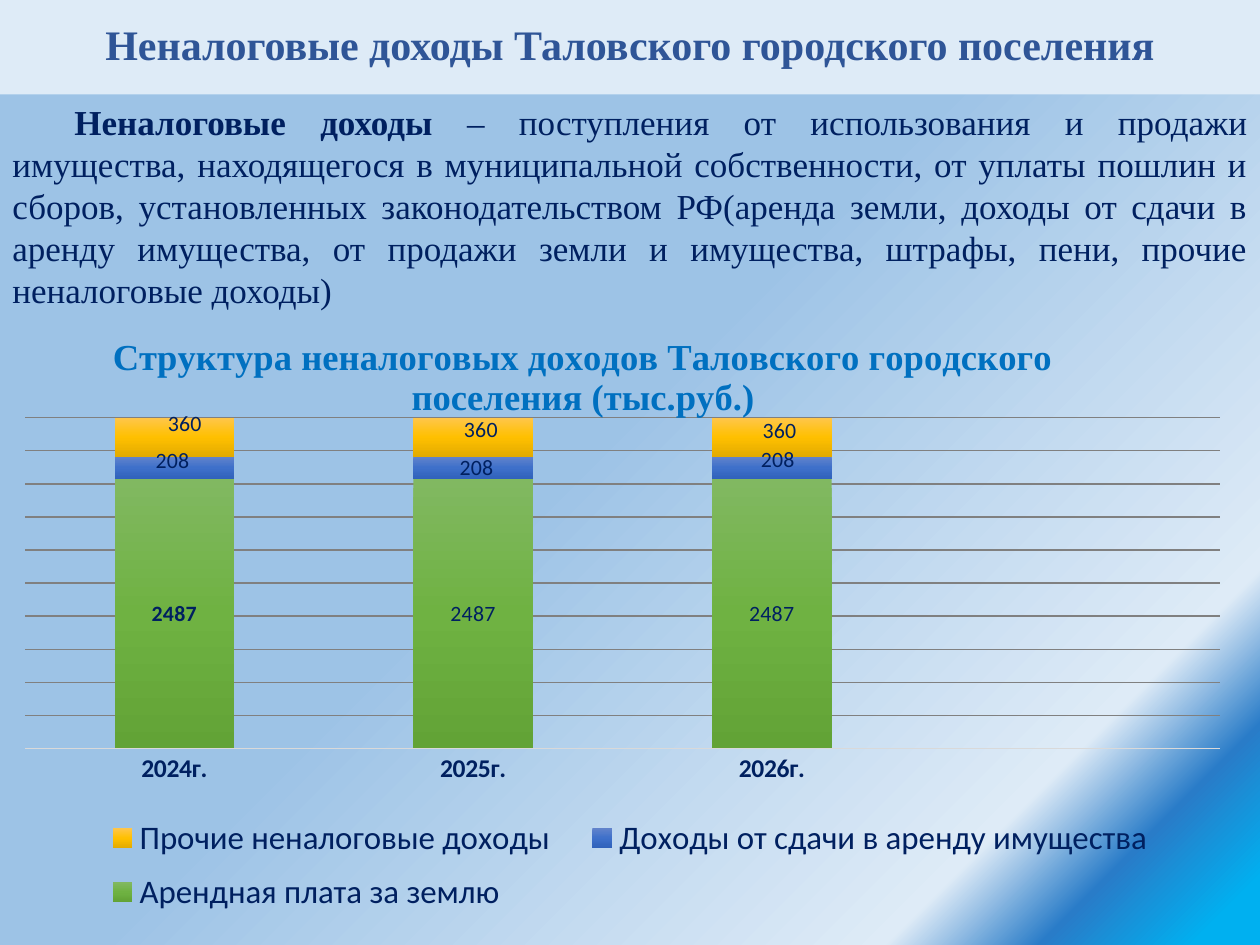
from dataclasses import dataclass

from lxml import etree
from pptx import Presentation, util as u
from pptx.chart.data import CategoryChartData
from pptx.dml.color import RGBColor
from pptx.enum import chart as ch, text as tx
from pptx.oxml.ns import qn

Pt = u.Pt


@dataclass(frozen=True)
class Theme:
    serif: str = "Times New Roman"
    sans: str = "Calibri"
    navy: str = "002060"
    head: str = "2F5597"
    band: str = "DEEBF7"
    sky: str = "0070C0"
    grid: str = "808080"
    base: str = "D9D9D9"
    back: tuple = ((4, "9DC3E6"), (47, "9DC3E6"), (83, "DEEBF7"),
                   (90, "297CC8"), (97, "00B0F0"))
    green: tuple = ((0, "81B861"), (50, "6FB242"), (100, "62A336"))
    blue: tuple = ((0, "6183CB"), (50, "3E70CA"), (100, "3062BB"))
    gold: tuple = ((0, "FFC64B"), (50, "FFC000"), (100, "E3AB00"))
    big: float = 24
    body: float = 20
    sub: float = 20.9
    key: float = 18.8
    tick: float = 14.6
    mark: float = 12.5


@dataclass(frozen=True)
class Box:
    left: float
    top: float
    wide: float
    high: float

    def rect(self) -> tuple:
        return Pt(self.left), Pt(self.top), Pt(self.wide), Pt(self.high)


@dataclass(frozen=True)
class Part:
    name: str
    value: int
    stops: tuple
    shifts: tuple  # label offsets from the bar centre, in points, per year
    bold: tuple = (False, False, False)


T = Theme()
PAGE = Box(0, 0, 720, 540)
HEAD = Box(0, 0, 720, 54)
BODY = Box(0, 54, 720, 128)
PLOT = Box(3.6, 172, 712.8, 364.3)
YEARS = ("2024г.", "2025г.", "2026г.")
PARTS = (
    Part("Арендная плата за землю", 2487, T.green,
         ((0, 0), (0, 0), (0, 0)), (True, False, False)),
    Part("Доходы от сдачи в аренду имущества", 208, T.blue,
         ((-1, -4), (2, 0), (3.5, -4.5))),
    Part("Прочие неналоговые доходы", 360, T.gold,
         ((6, -7.5), (4.5, -4), (4.5, -3.5))),
)


def style(font, size: float, color: str, face: str, bold: bool = False) -> None:
    font.size, font.name, font.bold = Pt(size), face, bold
    font.color.rgb = RGBColor.from_string(color)


def write(para, words: str, *look) -> None:
    run = para.add_run()
    run.text = words
    style(run.font, *look)


def blend(fill, root, stops: tuple, angle: float) -> None:
    """Give fill, found inside root, a linear gradient with these stops."""
    fill.gradient()
    fill.gradient_angle = angle
    items = next(root.iter(qn("a:gsLst")))
    for old in list(items):
        items.remove(old)
    for spot, color in stops:
        stop = etree.SubElement(items, qn("a:gs"), pos=str(spot * 1000))
        etree.SubElement(stop, qn("a:srgbClr"), val=color)


def place(item, index: int = 1, **marks) -> None:
    """Set a manual chart layout; marks are fractions of the chart."""
    for old in item.findall(qn("c:layout")):
        item.remove(old)
    outer = etree.Element(qn("c:layout"))
    inner = etree.SubElement(outer, qn("c:manualLayout"))
    for tag, value in marks.items():
        etree.SubElement(inner, qn(f"c:{tag}"), val=str(value))
    item.insert(index, outer)


def add_head(slide) -> None:
    head = slide.shapes.title
    head.left, head.top, head.width, head.height = HEAD.rect()
    head.fill.solid()
    head.fill.fore_color.rgb = RGBColor.from_string(T.band)
    head.text_frame.vertical_anchor = tx.MSO_ANCHOR.MIDDLE
    para = head.text_frame.paragraphs[0]
    para.alignment, para.line_spacing = tx.PP_ALIGN.CENTER, 0.9
    write(para, "Неналоговые доходы Таловского городского поселения",
          T.big, T.head, T.serif, True)


def add_body(slide) -> None:
    frame = slide.shapes.add_textbox(*BODY.rect()).text_frame
    frame.word_wrap = True
    frame.auto_size = tx.MSO_AUTO_SIZE.SHAPE_TO_FIT_TEXT
    para = frame.paragraphs[0]
    para.alignment = tx.PP_ALIGN.JUSTIFY
    para._p.get_or_add_pPr().set("indent", str(Pt(35.4)))
    look = (T.body, T.navy, T.serif)
    write(para, "Неналоговые доходы ", *look, True)
    write(para, "– поступления от использования и продажи имущества, "
          "находящегося в муниципальной собственности, от уплаты пошлин и "
          "сборов, установленных законодательством РФ(аренда земли, доходы "
          "от сдачи в аренду имущества, от продажи земли и имущества, "
          "штрафы, пени, прочие неналоговые доходы)", *look)


def format_part(series, part: Part) -> None:
    blend(series.format.fill, series._element, part.stops, 270)
    for index, (right, down) in enumerate(part.shifts):
        label = series.points[index].data_label
        style(label.font, T.mark, T.navy, T.sans, part.bold[index])
        label.position = ch.XL_LABEL_POSITION.CENTER
        if right or down:
            spot = series._element.findall(".//" + qn("c:dLbl"))[index]
            place(spot, x=round(right / PLOT.wide, 4),
                  y=round(down / PLOT.high, 4))


def format_axes(chart) -> None:
    years, share = chart.category_axis, chart.value_axis
    years.major_tick_mark = ch.XL_TICK_MARK.NONE
    style(years.tick_labels.font, T.tick, T.navy, T.sans, True)
    share.visible = False
    share.has_major_gridlines = True
    share.major_unit = 0.1
    for line, color, width in ((years.format.line, T.base, 1.05),
                               (share.major_gridlines.format.line, T.grid, 0.78)):
        line.color.rgb = RGBColor.from_string(color)
        line.width = Pt(width)


def add_chart(slide) -> None:
    data = CategoryChartData(number_format="0")
    data.categories = (*YEARS, "")  # the last slot stays empty
    for part in PARTS:
        data.add_series(part.name, [part.value] * len(YEARS) + [None])
    chart = slide.shapes.add_chart(
        ch.XL_CHART_TYPE.COLUMN_STACKED_100, *PLOT.rect(), data).chart
    style(chart.font, 10, "000000", T.sans)

    chart.has_title = True
    write(chart.chart_title.text_frame.paragraphs[0],
          "Структура неналоговых доходов Таловского городского поселения "
          "(тыс.руб.)", T.sub, T.sky, T.serif, True)
    place(chart.chart_title._element, xMode="edge", yMode="edge", x=0.08, y=0.04)

    chart.has_legend = True
    key = chart.legend
    key.position, key.include_in_layout = ch.XL_LEGEND_POSITION.RIGHT, False
    style(key.font, T.key, T.navy, T.sans)
    place(key._element, xMode="edge", yMode="edge", x=0.06, y=0.79, w=0.88, h=0.19)

    area = next(chart._chartSpace.iter(qn("c:plotArea")))
    place(area, 0, layoutTarget="inner", xMode="edge", yMode="edge",
          x=0.015, y=0.183, w=0.958, h=0.519)
    plot = chart.plots[0]
    plot.gap_width, plot.overlap, plot.vary_by_categories = 150, 100, False
    format_axes(chart)
    for series, part in zip(plot.series, PARTS):
        format_part(series, part)


def main() -> None:
    deck = Presentation()
    deck.slide_width, deck.slide_height = Pt(PAGE.wide), Pt(PAGE.high)
    slide = deck.slides.add_slide(deck.slide_layouts[5])
    blend(slide.background.fill, slide._element, T.back, 315)
    add_head(slide)
    add_body(slide)
    add_chart(slide)
    deck.save("out.pptx")


if __name__ == "__main__":
    main()
